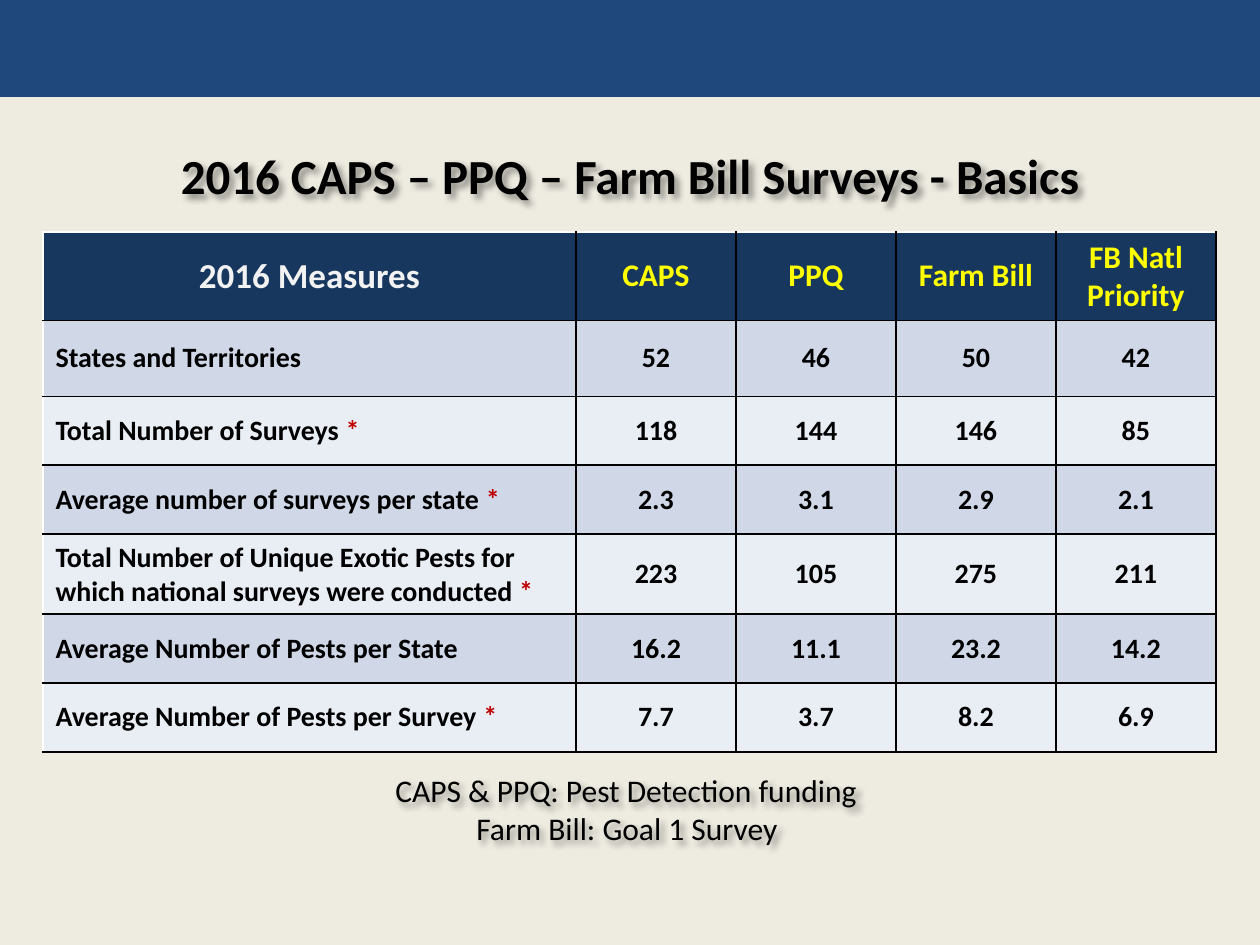
from lxml import etree
from pptx import Presentation
from pptx.dml.color import RGBColor
from pptx.enum.shapes import MSO_SHAPE
from pptx.enum.text import MSO_ANCHOR, MSO_AUTO_SIZE, PP_ALIGN
from pptx.oxml.ns import qn
from pptx.util import Emu, Pt

RECTANGLE = MSO_SHAPE.RECTANGLE
MIDDLE = MSO_ANCHOR.MIDDLE
GROW = MSO_AUTO_SIZE.SHAPE_TO_FIT_TEXT
LEFT, CENTER = PP_ALIGN.LEFT, PP_ALIGN.CENTER

EMU_PER_PX = 914400 / 126
FONT = "Calibri"
COLORS = {
    "page": "EEECE1", "band": "1F497D", "header": "17375E",
    "odd_row": "D0D8E8", "even_row": "E9EDF4",
    "text": "000000", "corner": "F2F2F2", "heading": "FFFF00", "star": "C00000",
    "border": "000000", "outer": "FFFFFF",
}
COLUMN_WIDTHS = [533, 160, 160, 160, 160]
ROW_HEIGHTS = [88, 76, 69, 69, 69, 69, 69]
HEADINGS = ["2016 Measures", "CAPS", "PPQ", "Farm Bill", "FB Natl Priority"]
MEASURES = [
    ["States and Territories", "52", "46", "50", "42"],
    ["Total Number of Surveys *", "118", "144", "146", "85"],
    ["Average number of surveys per state *", "2.3", "3.1", "2.9", "2.1"],
    ["Total Number of Unique Exotic Pests for which national surveys were conducted *",
     "223", "105", "275", "211"],
    ["Average Number of Pests per State", "16.2", "11.1", "23.2", "14.2"],
    ["Average Number of Pests per Survey *", "7.7", "3.7", "8.2", "6.9"],
]


def px(length):
    return Emu(round(length * EMU_PER_PX))


def rgb(name):
    return RGBColor.from_string(COLORS[name])


def style_paragraph(para, size, color, bold=False, align=LEFT):
    para.alignment = align
    para.font.name = FONT
    para.font.size = Pt(size)
    para.font.bold = bold
    para.font.color.rgb = rgb(color)


def add_band(page):
    band = page.shapes.add_shape(RECTANGLE, 0, 0, px(1260), px(97))
    band.shadow.inherit = False
    band.fill.solid()
    band.fill.fore_color.rgb = rgb("band")
    band.line.fill.background()


def add_text_shadow(box):
    """Give an unfilled box a soft shadow, which falls from its letters."""
    effects = etree.SubElement(box._element.spPr, qn("a:effectLst"))
    shadow = etree.SubElement(effects, qn("a:outerShdw"), blurRad="50800",
                              dist="38100", dir="2700000", algn="tl", rotWithShape="0")
    color = etree.SubElement(shadow, qn("a:srgbClr"), val=COLORS["text"])
    etree.SubElement(color, qn("a:alpha"), val="40000")


def add_text(page, text, left, top, width, height, size, bold=False, align=LEFT):
    box = page.shapes.add_textbox(px(left), px(top), px(width), px(height))
    para = box.text_frame.paragraphs[0]
    para.text = text
    style_paragraph(para, size, "text", bold, align)
    add_text_shadow(box)
    return box.text_frame


def add_title(page, text):
    frame = add_text(page, text, 63, 126, 1134, 98, 28, bold=True, align=CENTER)
    frame.word_wrap = True
    frame.vertical_anchor = MIDDLE


def add_caption(page, text, left, top, width):
    frame = add_text(page, text, left, top, width, 50, 18)
    frame.word_wrap = False
    frame.auto_size = GROW


def add_borders(cell, row, column):
    sides = {"lnL": "outer" if column == 0 else "border", "lnR": "border",
             "lnT": "outer" if row == 0 else "border", "lnB": "border"}
    properties = cell._tc.get_or_add_tcPr()
    for side, color in sides.items():
        line = etree.SubElement(properties, qn(f"a:{side}"), w=str(Pt(1)))
        fill = etree.SubElement(line, qn("a:solidFill"))
        etree.SubElement(fill, qn("a:srgbClr"), val=COLORS[color])


def write_cell(cell, text, row, column):
    para = cell.text_frame.paragraphs[0]
    label, star, _ = text.partition("*")
    para.add_run().text = label
    if star:
        span = para.add_run()
        span.text = star
        span.font.color.rgb = rgb("star")
    if row == 0:
        size, color = (20, "corner") if column == 0 else (18, "heading")
    else:
        size, color = 16, "text"
    is_label = row > 0 and column == 0
    style_paragraph(para, size, color, True, LEFT if is_label else CENTER)


def add_measures_table(page, left, top):
    rows = [HEADINGS] + MEASURES
    frame = page.shapes.add_table(len(rows), len(HEADINGS), px(left), px(top),
                                  px(sum(COLUMN_WIDTHS)), px(sum(ROW_HEIGHTS)))
    table = frame.table
    for column, width in enumerate(COLUMN_WIDTHS):
        table.columns[column].width = px(width)
    for row, texts in enumerate(rows):
        table.rows[row].height = px(ROW_HEIGHTS[row])
        fill = "header" if row == 0 else ("even_row", "odd_row")[row % 2]
        for column, text in enumerate(texts):
            cell = table.cell(row, column)
            cell.vertical_anchor = MIDDLE
            add_borders(cell, row, column)
            cell.fill.solid()
            cell.fill.fore_color.rgb = rgb(fill)
            write_cell(cell, text, row, column)


def main():
    deck = Presentation()
    deck.slide_width, deck.slide_height = px(1260), px(945)
    page = deck.slides.add_slide(deck.slide_layouts[6])
    page.background.fill.solid()
    page.background.fill.fore_color.rgb = rgb("page")
    add_band(page)
    add_title(page, "2016 CAPS – PPQ – Farm Bill Surveys - Basics")
    add_caption(page, "CAPS & PPQ: Pest Detection funding", 383, 765, 493)
    add_measures_table(page, 43, 232)
    add_caption(page, "Farm Bill: Goal 1 Survey", 464, 803, 330)
    deck.save("out.pptx")


if __name__ == "__main__":
    main()
